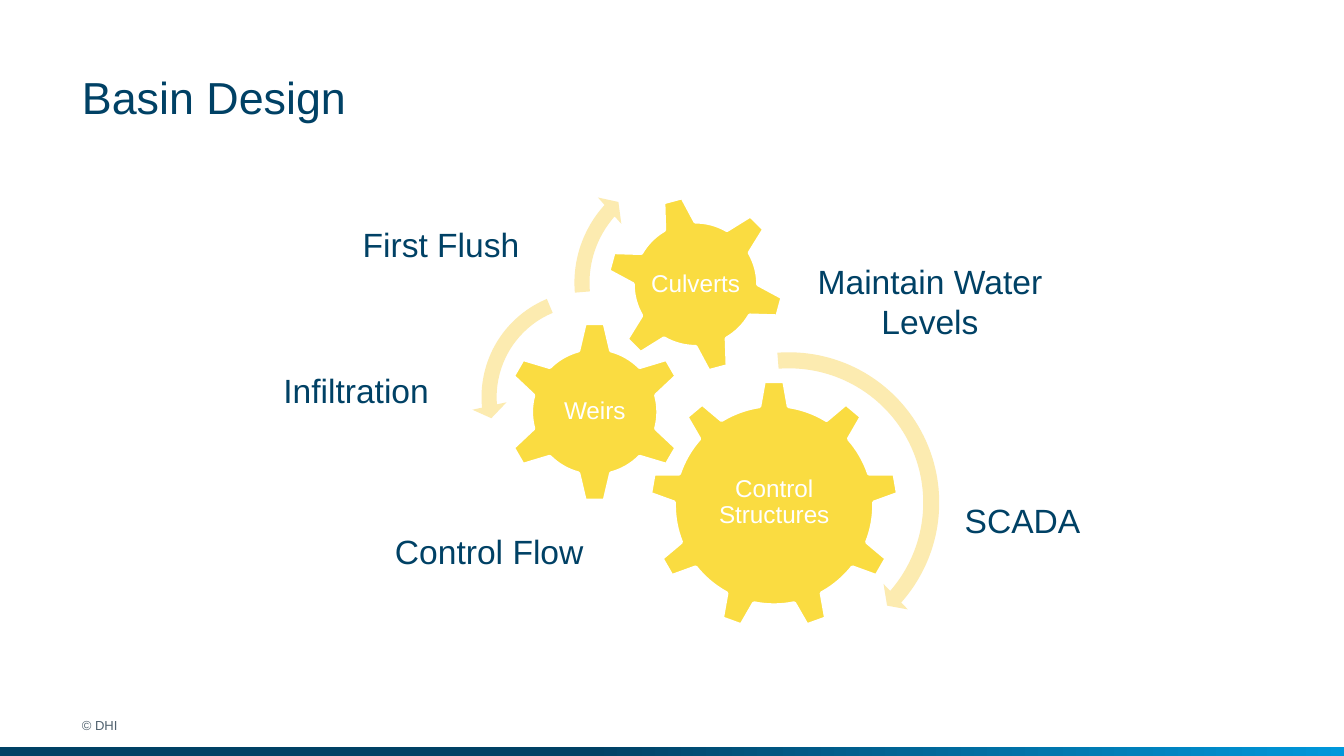
from dataclasses import dataclass

from pptx import Presentation
from pptx.dml.color import RGBColor
from pptx.enum.shapes import MSO_SHAPE
from pptx.enum.text import MSO_ANCHOR, PP_ALIGN
from pptx.util import Inches, Pt

COLS, ROWS = 100, 56.25
CELL = Inches(10) / COLS


@dataclass(frozen=True)
class Theme:
    """Colours and type sizes of the slide."""
    font: str = "Arial"
    navy: str = "004165"
    blue: str = "0098DB"
    slate: str = "51626F"
    gold: str = "FADC41"
    cream: str = "FCEBB0"
    white: str = "FFFFFF"
    title: float = 24
    label: float = 18
    gear: float = 13
    foot: float = 7


THEME = Theme()


def rgb(code):
    """Return a colour from its hex code."""
    return RGBColor.from_string(code)


def grid(*cells):
    """Turn counts of grid cells into lengths."""
    return [round(n * CELL) for n in cells]


def add_text(slide, text, box, size, color=THEME.navy, align=PP_ALIGN.LEFT,
             anchor=MSO_ANCHOR.TOP, inset=None, wrap=True, lead=None):
    """Add a one-paragraph text box."""
    frame = slide.shapes.add_textbox(*grid(*box)).text_frame
    frame.word_wrap = wrap
    frame.vertical_anchor = anchor
    if inset is not None:
        frame.margin_left = frame.margin_right = Inches(inset)
        frame.margin_top = frame.margin_bottom = Inches(inset)
    para = frame.paragraphs[0]
    para.text = text
    para.alignment = align
    para.line_spacing = lead
    para.font.name = THEME.font
    para.font.size = Pt(size)
    para.font.color.rgb = rgb(color)


def add_shape(slide, kind, box, color):
    """Add a flat shape without outline."""
    shape = slide.shapes.add_shape(kind, *grid(*box))
    shape.shadow.inherit = False
    shape.fill.solid()
    shape.fill.fore_color.rgb = rgb(color)
    shape.line.fill.background()
    return shape


def add_gear(slide, kind, text, left, top, size, share, turn=0, lift=0):
    """Add a gear with an upright caption at its hub."""
    gear = add_shape(slide, kind, (left, top, size, size), THEME.gold)
    gear.line.color.rgb = rgb(THEME.white)
    gear.line.width = Pt(2)
    gear.rotation = turn
    side = size * share
    gap = (size - side) / 2
    add_text(slide, text, (left + gap, top + gap - lift, side, side),
             THEME.gear, THEME.white, PP_ALIGN.CENTER, MSO_ANCHOR.MIDDLE,
             inset=0.02, lead=0.9)


def add_arc(slide, kind, left, top, size, bends):
    """Add a curved arrow showing how a gear turns."""
    arc = add_shape(slide, kind, (left, top, size, size), THEME.cream)
    for i, bend in enumerate(bends):
        arc.adjustments[i] = bend


def add_band(slide):
    """Add the gradient band along the bottom edge."""
    tall = 0.63
    band = add_shape(slide, MSO_SHAPE.RECTANGLE,
                     (0, ROWS - tall, COLS, tall), THEME.navy)
    band.fill.gradient()
    band.fill.gradient_angle = 0
    stops = ((0.44, THEME.navy), (1, THEME.blue))
    for stop, (place, color) in zip(band.fill.gradient_stops, stops):
        stop.position = place
        stop.color.rgb = rgb(color)


def main():
    """Build and save the slide."""
    deck = Presentation()
    deck.slide_width, deck.slide_height = grid(COLS, ROWS)
    slide = deck.slides.add_slide(deck.slide_layouts[6])

    add_band(slide)
    add_text(slide, "Basin Design", (6.1, 1.9, 87.9, 7.3), THEME.title,
             anchor=MSO_ANCHOR.BOTTOM, inset=0)
    add_text(slide, "© DHI", (6.1, 53.4, 15.5, 1.5), THEME.foot,
             THEME.slate, inset=0)

    add_gear(slide, MSO_SHAPE.GEAR_9, "Control Structures",
             48.3, 28.3, 18.6, 0.6, lift=0.2)
    add_gear(slide, MSO_SHAPE.GEAR_6, "Weirs", 37.5, 23.9, 13.5, 0.5)
    add_gear(slide, MSO_SHAPE.GEAR_6, "Culverts",
             45.1, 14.5, 13.3, 0.56, turn=345)

    add_arc(slide, MSO_SHAPE.CIRCULAR_ARROW, 46.8, 25.5, 23.8,
            (0.05, 2.99, 24.83, 159.36, 0.055))
    add_arc(slide, MSO_SHAPE.LEFT_CIRCULAR_ARROW, 35.1, 20.9, 17.3,
            (0.065, 4.3, 104.89, 148.38, 0.075))
    add_arc(slide, MSO_SHAPE.CIRCULAR_ARROW, 42, 11.7, 18.7,
            (0.06, 3.94, 133.14, 105.08, 0.07))

    add_text(slide, "Maintain Water Levels", (59.7, 18.9, 19, 7.1),
             THEME.label, align=PP_ALIGN.CENTER)
    labels = (("Control Flow", 28.4, 39, 16.2),
              ("First Flush", 26, 16.2, 13.8),
              ("Infiltration", 20.1, 27, 13),
              ("SCADA", 70.8, 36.7, 10.7))
    for text, left, top, wide in labels:
        add_text(slide, text, (left, top, wide, 4), THEME.label, wrap=False)

    deck.save("out.pptx")


if __name__ == "__main__":
    main()
